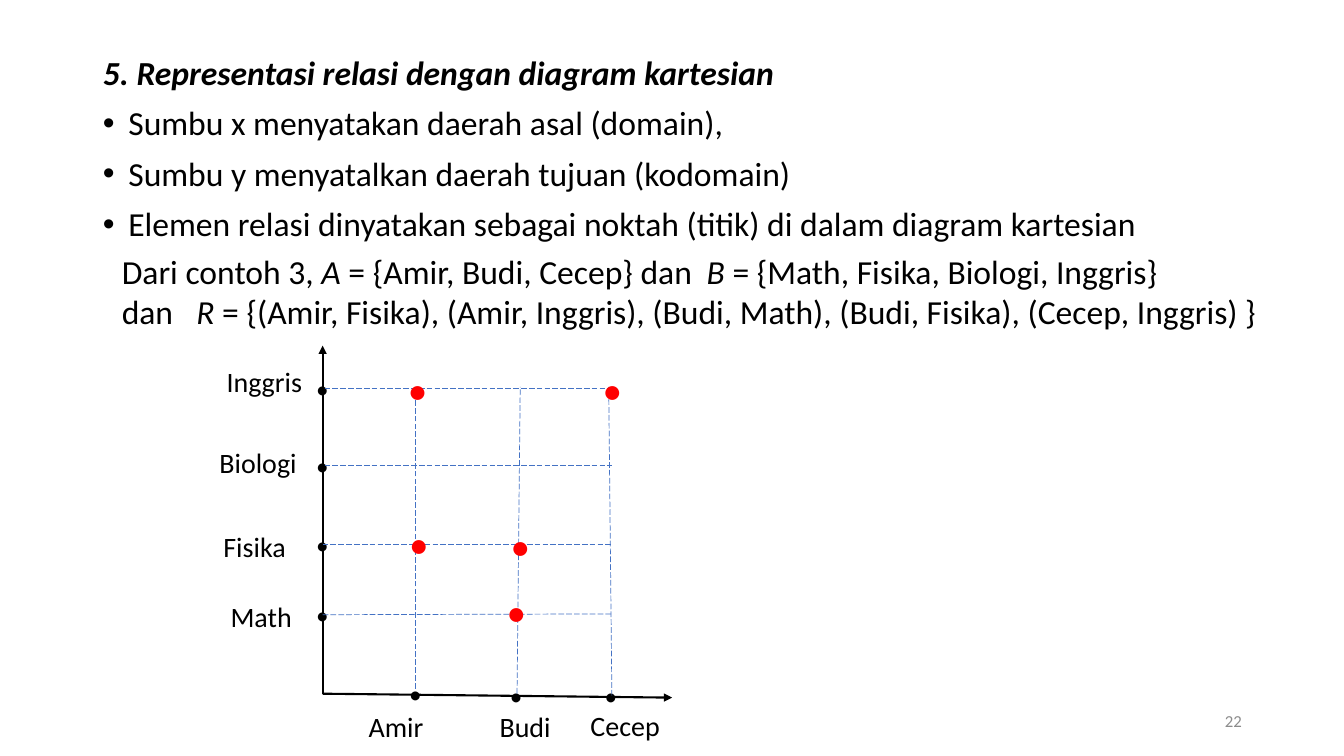
import pptx
import pptx.util
import pptx.dml.color
import pptx.enum.dml
import pptx.enum.shapes
import pptx.enum.text
import pptx.oxml
import pptx.oxml.ns
from pptx.util import Cm

FONT = "Calibri"
BLACK, RED, BLUE, GRAY = "000000", "FF0000", "4472C4", "8C8C8C"
PP = pptx.enum.text.PP_ALIGN
ANCHOR = pptx.enum.text.MSO_ANCHOR
AUTO = pptx.enum.text.MSO_AUTO_SIZE

HEADING = "5. Representasi relasi dengan diagram kartesian"
BULLETS = [
    "Sumbu x menyatakan daerah asal (domain),",
    "Sumbu y menyatalkan daerah tujuan (kodomain)",
    "Elemen relasi dinyatakan sebagai noktah (titik) di dalam diagram kartesian",
]
EXAMPLE = [
    (14.74, [("Dari contoh 3, ", False), ("A", True),
             (" = {Amir, Budi, Cecep} dan\t", False), ("B", True),
             (" = {Math, Fisika, Biologi, Inggris}", False)]),
    (1.88, [("dan\t", False), ("R", True),
            (" = {(Amir, Fisika), (Amir, Inggris), (Budi, Math), "
             "(Budi, Fisika), (Cecep, Inggris) }", False)]),
]

DOMAIN = [
    ("Amir", 9.04, 17.75, 1.9, 10.06, 16.97),
    ("Budi", 12.34, 17.75, 1.8, 12.6, 17.02),
    ("Cecep", 14.63, 17.73, 2.29, 14.99, 17.02),
]
CODOMAIN = [
    ("Math", 5.56, 14.99, 2.06, 7.72, 14.99),
    ("Fisika", 5.38, 13.23, 2.29, 7.72, 13.21),
    ("Biologi", 5.28, 11.1, 2.59, 7.72, 11.23),
    ("Inggris", 5.46, 9.07, 2.54, 7.72, 9.27),
]
AXES = [(8.13, 17.48, 16.94, 17.58), (8.13, 17.48, 8.13, 8.71)]
GRID = [
    (8.13, 15.49, 15.42, 15.47),
    (8.13, 13.72, 15.39, 13.72),
    (8.18, 11.73, 15.42, 11.73),
    (8.18, 9.78, 15.42, 9.78),
    (10.46, 17.35, 10.46, 9.78),
    (13.03, 17.48, 13.11, 9.75),
    (15.42, 17.53, 15.34, 9.75),
]
RELATION = [
    (10.06, 12.95, 0.99),
    (10.03, 9.09, 0.99),
    (12.52, 14.68, 1.07),
    (12.62, 13.0, 0.97),
    (14.94, 9.07, 0.91),
]


def rgb(color):
    return pptx.dml.color.RGBColor.from_string(color)


def add_xml(parent, tag, **attrs):
    el = pptx.oxml.ns.qn(tag)
    child = parent.makeelement(el, attrs)
    parent.append(child)
    return child


def add_text(p, text, size=24, color=BLACK, bold=False, italic=False):
    r = p.add_run()
    r.text = text
    r.font.name = FONT
    r.font.size = pptx.util.Pt(size)
    r.font.bold = bold
    r.font.italic = italic
    r.font.color.rgb = rgb(color)
    return r


def add_box(slide, x, y, w, h, wrap=False):
    sp = slide.shapes.add_textbox(Cm(x), Cm(y), Cm(w), Cm(h))
    tf = sp.text_frame
    tf.word_wrap = wrap
    return tf


def add_label(slide, text, x, y, w, h, **style):
    tf = add_box(slide, x, y, w, h)
    add_text(tf.paragraphs[0], text, **style)
    return tf


def add_line(slide, ends, color, width, arrow=False, dashed=False):
    c = slide.shapes.add_connector(
        pptx.enum.shapes.MSO_CONNECTOR.STRAIGHT, *[Cm(v) for v in ends])
    c.line.color.rgb = rgb(color)
    c.line.width = pptx.util.Pt(width)
    if dashed:
        c.line.dash_style = pptx.enum.dml.MSO_LINE.LONG_DASH
    if arrow:
        add_xml(c.line._get_or_add_ln(), "a:tailEnd", type="triangle")
    add_xml(c._element.spPr, "a:effectLst")


def add_body(slide):
    title = slide.shapes.title._element
    title.getparent().remove(title)
    sp = slide.placeholders[1]
    sp.left, sp.top, sp.width, sp.height = Cm(2.34), Cm(1.3), Cm(29.21), Cm(14.86)
    tf = sp.text_frame
    tf.auto_size = AUTO.NONE
    for i, text in enumerate([HEADING] + BULLETS):
        p = tf.add_paragraph() if i else tf.paragraphs[0]
        p.line_spacing = 0.9
        p.space_before = pptx.util.Pt(10 if i else 0)
        pPr = p._p.get_or_add_pPr()
        indent = Cm(0.64) if i else 0
        pPr.set("marL", str(indent))
        pPr.set("indent", str(-indent))
        if i:
            add_xml(pPr, "a:buFont", typeface="Arial")
            add_xml(pPr, "a:buChar", char="•")
        else:
            add_xml(pPr, "a:buNone")
        add_text(p, text, bold=i == 0, italic=i == 0)


def add_example(slide):
    tf = add_box(slide, 2.82, 6.2, 30.86, 2.31, wrap=True)
    for i, (stop, runs) in enumerate(EXAMPLE):
        p = tf.add_paragraph() if i else tf.paragraphs[0]
        tabs = add_xml(p._p.get_or_add_pPr(), "a:tabLst")
        add_xml(tabs, "a:tab", pos=str(Cm(stop)), algn="l")
        for text, italic in runs:
            add_text(p, text, italic=italic)


def add_diagram(slide):
    for ends in AXES:
        add_line(slide, ends, BLACK, 1.5, arrow=True)
    for text, x, y, w, dot_x, dot_y in DOMAIN + CODOMAIN:
        add_label(slide, text, x, y, w, 1.12, size=20)
        add_label(slide, "•", dot_x, dot_y, 0.84, 1.02, size=18)
    for ends in GRID:
        add_line(slide, ends, BLUE, 0.5, dashed=True)
    for x, y, w in RELATION:
        add_label(slide, "•", x, y, w, 1.45, size=28, color=RED)


def add_page_number(slide):
    tf = add_label(slide, "22", 23.93, 17.65, 7.62, 1.02, size=12, color=GRAY)
    tf.word_wrap = True
    tf.vertical_anchor = ANCHOR.MIDDLE
    tf.paragraphs[0].alignment = PP.RIGHT


def main():
    prs = pptx.Presentation()
    prs.slide_width, prs.slide_height = Cm(33.87), Cm(19.05)
    slide = prs.slides.add_slide(prs.slide_layouts[1])
    add_body(slide)
    add_example(slide)
    add_diagram(slide)
    add_page_number(slide)
    prs.save("out.pptx")


if __name__ == "__main__":
    main()
